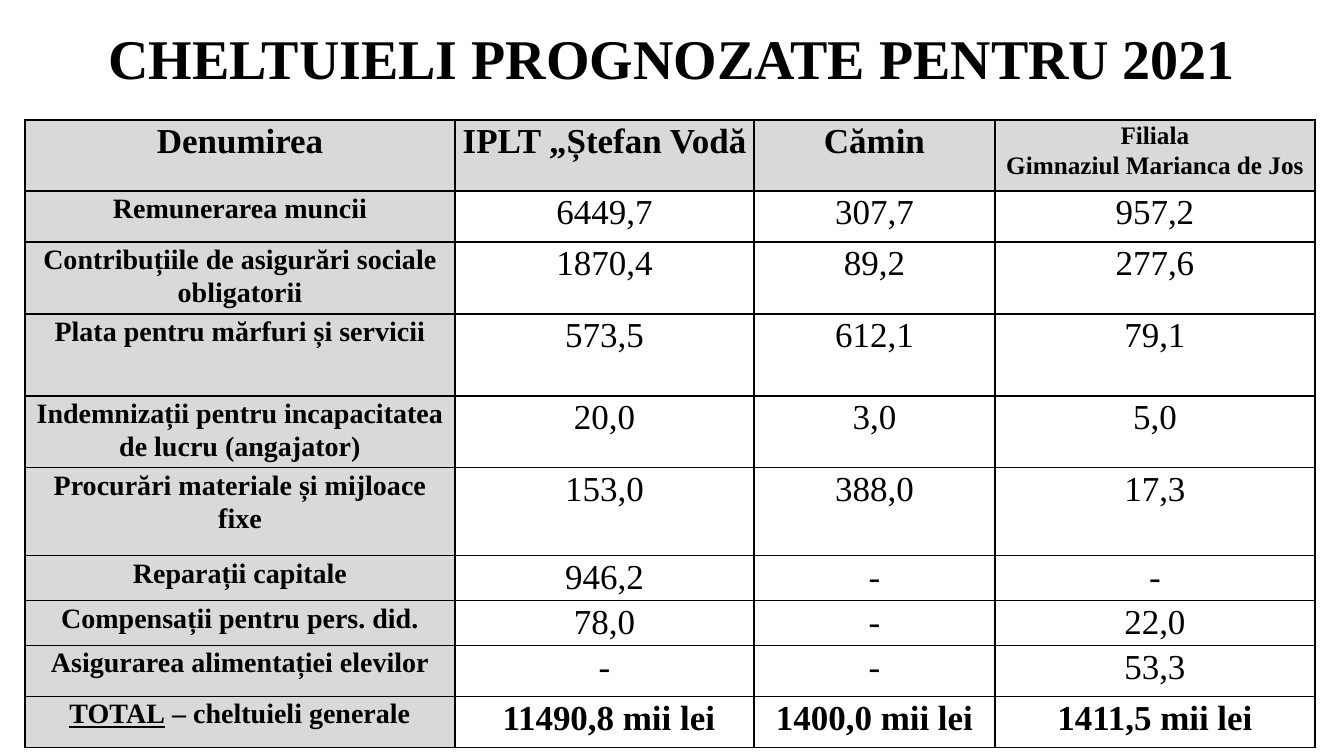
from dataclasses import dataclass

from lxml.etree import SubElement
from pptx import Presentation
from pptx.dml.color import RGBColor
from pptx.enum.text import MSO_ANCHOR, PP_ALIGN
from pptx.oxml.ns import qn
from pptx.slide import Slide
from pptx.table import Table, _Cell
from pptx.text.text import TextFrame
from pptx.util import Emu, Pt

EMU_PER_PX = 12192000 / 1344
FONT = "Times New Roman"
BLACK, WHITE, GREY = "000000", "FFFFFF", "D9D9D9"
LABEL_SIZE, VALUE_SIZE, BRANCH_SIZE, TITLE_SIZE = 20, 25, 18, 40
COLUMN_WIDTHS = (430, 299, 241, 320)
HEADINGS = (
    "Denumirea",
    "IPLT „Ștefan Vodă",
    "Cămin",
    "Filiala\nGimnaziul Marianca de Jos",
)
HEADING_HEIGHT = 71
TOTAL_WORD = "TOTAL"


@dataclass(frozen=True)
class Expense:
    label: str
    amounts: tuple[str, str, str]
    height: int


EXPENSES = (
    Expense("Remunerarea muncii", ("6449,7", "307,7", "957,2"), 51),
    Expense("Contribuțiile de asigurări sociale obligatorii", ("1870,4", "89,2", "277,6"), 66),
    Expense("Plata pentru mărfuri și servicii", ("573,5", "612,1", "79,1"), 82),
    Expense("Indemnizații pentru incapacitatea de lucru (angajator)", ("20,0", "3,0", "5,0"), 67),
    Expense("Procurări materiale și mijloace fixe", ("153,0", "388,0", "17,3"), 88),
    Expense("Reparații capitale", ("946,2", "-", "-"), 43),
    Expense("Compensații pentru pers. did.", ("78,0", "-", "22,0"), 44),
    Expense("Asigurarea alimentației elevilor", ("-", "-", "53,3"), 51),
)
TOTAL = Expense(
    " – cheltuieli generale",
    (" 11490,8 mii lei", "1400,0 mii lei", "1411,5 mii lei"),
    51,
)


def px(length: int) -> Emu:
    return Emu(round(length * EMU_PER_PX))


def color(value: str) -> RGBColor:
    return RGBColor.from_string(value)


def format_text(frame: TextFrame, size: int, bold: bool) -> None:
    for paragraph in frame.paragraphs:
        paragraph.alignment = PP_ALIGN.CENTER
        for run in paragraph.runs:
            run.font.name = FONT
            run.font.size = Pt(size)
            run.font.bold = bold
            run.font.color.rgb = color(BLACK)


def draw_borders(cell: _Cell) -> None:
    properties = cell._tc.get_or_add_tcPr()
    for position, side in enumerate(("lnL", "lnR", "lnT", "lnB")):
        border = SubElement(properties, qn(f"a:{side}"), w=str(Pt(1)))
        properties.insert(position, border)
        fill = SubElement(border, qn("a:solidFill"))
        SubElement(fill, qn("a:srgbClr"), val=BLACK)


def fill_cell(cell: _Cell, text: str, size: int, bold: bool, background: str) -> None:
    cell.margin_left = cell.margin_right = px(7)
    cell.margin_top = cell.margin_bottom = 0
    cell.fill.solid()
    cell.fill.fore_color.rgb = color(background)
    draw_borders(cell)
    cell.text_frame.text = text
    if background == GREY and text == TOTAL.label:
        label = cell.text_frame.paragraphs[0]
        label.text = TOTAL_WORD
        label.runs[0].font.underline = True
        label.add_run().text = TOTAL.label
    for paragraph in cell.text_frame.paragraphs:
        paragraph.line_spacing = 1.07
    format_text(cell.text_frame, size, bold)


def fill_expense(table: Table, row: int, expense: Expense) -> None:
    table.rows[row].height = px(expense.height)
    fill_cell(table.cell(row, 0), expense.label, LABEL_SIZE, True, GREY)
    for column, amount in enumerate(expense.amounts, start=1):
        fill_cell(table.cell(row, column), amount, VALUE_SIZE, expense is TOTAL, WHITE)


def draw_title(slide: Slide) -> None:
    title = slide.shapes.add_textbox(0, px(13), px(1344), px(88))
    title.fill.solid()
    title.fill.fore_color.rgb = color(WHITE)
    title.text_frame.word_wrap = True
    title.text_frame.vertical_anchor = MSO_ANCHOR.MIDDLE
    title.text_frame.text = "CHELTUIELI PROGNOZATE PENTRU 2021"
    format_text(title.text_frame, TITLE_SIZE, True)


def draw_expenses(slide: Slide) -> None:
    rows = (*EXPENSES, TOTAL)
    height = HEADING_HEIGHT + sum(expense.height for expense in rows)
    table = slide.shapes.add_table(
        len(rows) + 1, len(HEADINGS), px(25), px(120), px(sum(COLUMN_WIDTHS)), px(height)
    ).table
    table.horz_banding = False
    table.rows[0].height = px(HEADING_HEIGHT)
    for column, (heading, width) in enumerate(zip(HEADINGS, COLUMN_WIDTHS)):
        table.columns[column].width = px(width)
        size = BRANCH_SIZE if "\n" in heading else VALUE_SIZE
        fill_cell(table.cell(0, column), heading, size, True, GREY)
    for row, expense in enumerate(rows, start=1):
        fill_expense(table, row, expense)


def main() -> None:
    presentation = Presentation()
    presentation.slide_width = px(1344)
    presentation.slide_height = px(756)
    slide = presentation.slides.add_slide(presentation.slide_layouts[6])
    draw_title(slide)
    draw_expenses(slide)
    presentation.save("out.pptx")


if __name__ == "__main__":
    main()
